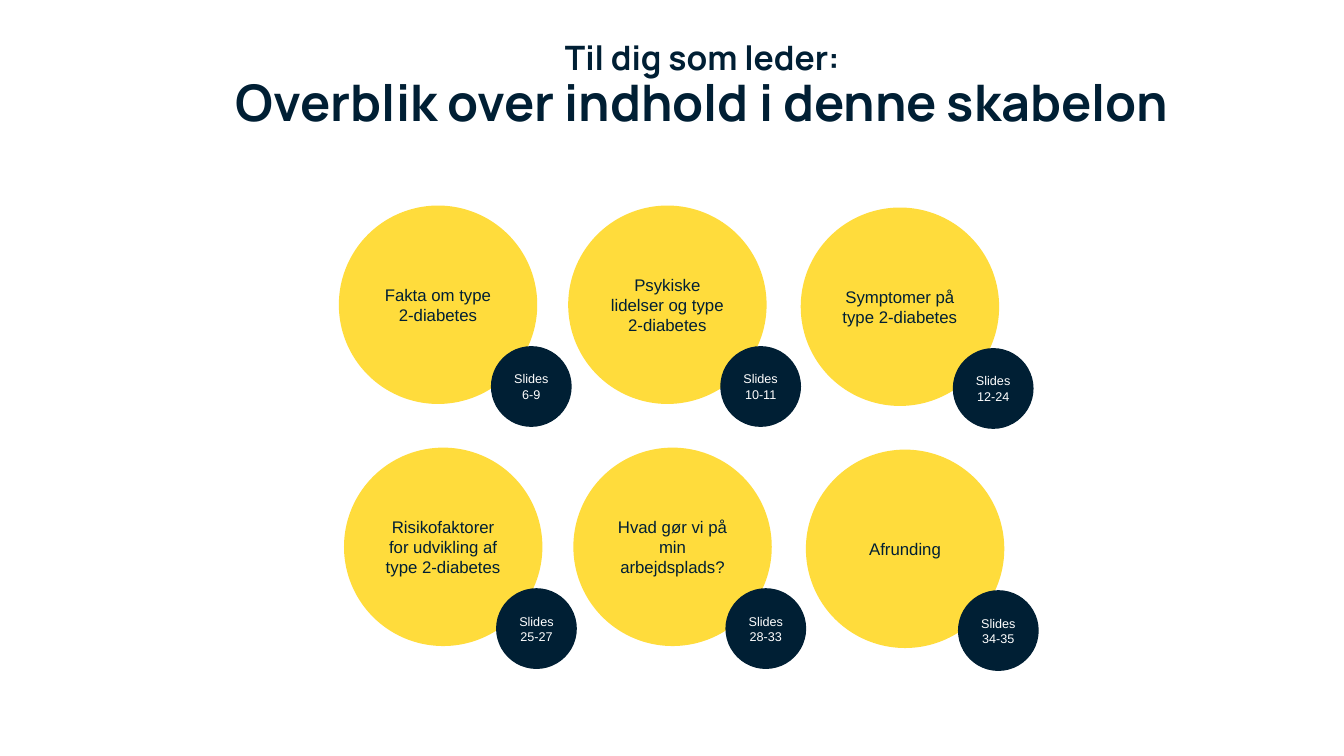
import pptx
import pptx.util
import pptx.dml.color
import pptx.enum.shapes
import pptx.enum.text
import pptx.oxml.ns
import lxml.etree

Cm = pptx.util.Cm
Pt = pptx.util.Pt

NAVY = "001F34"
YELLOW = "FFDC3C"
WHITE = "FFFFFF"

BIG, SMALL = 5, 2      # diameters in cm
COLS = (0, 5.78, 11.64)
DROPS = (0, 0, 0.05)   # the last column sits slightly lower
ROWS = (
    (8.54, 5.18, (
        ("Fakta om type 2-diabetes", "6-9"),
        ("Psykiske lidelser og type 2-diabetes", "10-11"),
        ("Symptomer på type 2-diabetes", "12-24"),
    )),
    (8.67, 11.28, (
        ("Risikofaktorer for udvikling af type 2-diabetes", "25-27"),
        ("Hvad gør vi på min arbejdsplads?", "28-33"),
        ("Afrunding", "34-35"),
    )),
)


def color(code):
    return pptx.dml.color.RGBColor.from_string(code)


def style(run, size, font, code, bold=False):
    run.font.size = Pt(size)
    run.font.name = font
    run.font.bold = bold
    run.font.color.rgb = color(code)


def add_title(slide, left, top, width, height):
    title = slide.shapes.title
    title.left, title.top = Cm(left), Cm(top)
    title.width, title.height = Cm(width), Cm(height)
    frame = title.text_frame
    frame.text = "Til dig som leder:\vOverblik over indhold i denne skabelon"
    frame.word_wrap = True
    frame.auto_size = pptx.enum.text.MSO_AUTO_SIZE.NONE
    frame.vertical_anchor = pptx.enum.text.MSO_ANCHOR.MIDDLE
    para = frame.paragraphs[0]
    para.alignment = pptx.enum.text.PP_ALIGN.CENTER
    para.line_spacing = 0.9
    for run, size in zip(para.runs, (24, 36)):
        style(run, size, "Manrope", NAVY, True)
    # The line break needs the size of the line it ends
    qn = pptx.oxml.ns.qn
    lxml.etree.SubElement(para._p.find(qn("a:br")), qn("a:rPr"), sz="2400")


def add_disc(slide, left, top, size, fill, text, points, ink):
    disc = slide.shapes.add_shape(
        pptx.enum.shapes.MSO_SHAPE.OVAL, Cm(left), Cm(top), Cm(size), Cm(size))
    disc.shadow.inherit = False
    disc.fill.solid()
    disc.fill.fore_color.rgb = color(fill)
    disc.line.fill.background()
    frame = disc.text_frame
    frame.text = text
    frame.word_wrap = True
    frame.vertical_anchor = pptx.enum.text.MSO_ANCHOR.MIDDLE
    for para in frame.paragraphs:
        para.alignment = pptx.enum.text.PP_ALIGN.CENTER
        for run in para.runs:
            style(run, points, "Arial", ink)
    return disc


def add_topic(slide, left, top, name, pages):
    """Place a topic disc with its page badge at the lower right."""
    add_disc(slide, left, top, BIG, YELLOW, name, 12, NAVY)
    badge = add_disc(slide, left + 3.85, top + 3.56, SMALL, NAVY,
                     "Slides\n" + pages, 9, WHITE)
    badge.line.color.rgb = color(NAVY)
    badge.line.width = Pt(1)


def main():
    deck = pptx.Presentation()
    deck.slide_width, deck.slide_height = Cm(33.87), Cm(19.05)
    slide = deck.slides.add_slide(deck.slide_layouts[5])
    add_title(slide, 3.1, 0.3, 29.2, 3.8)
    for left, top, topics in ROWS:
        for shift, drop, (name, pages) in zip(COLS, DROPS, topics):
            add_topic(slide, left + shift, top + drop, name, pages)
    deck.save("out.pptx")


if __name__ == "__main__":
    main()
